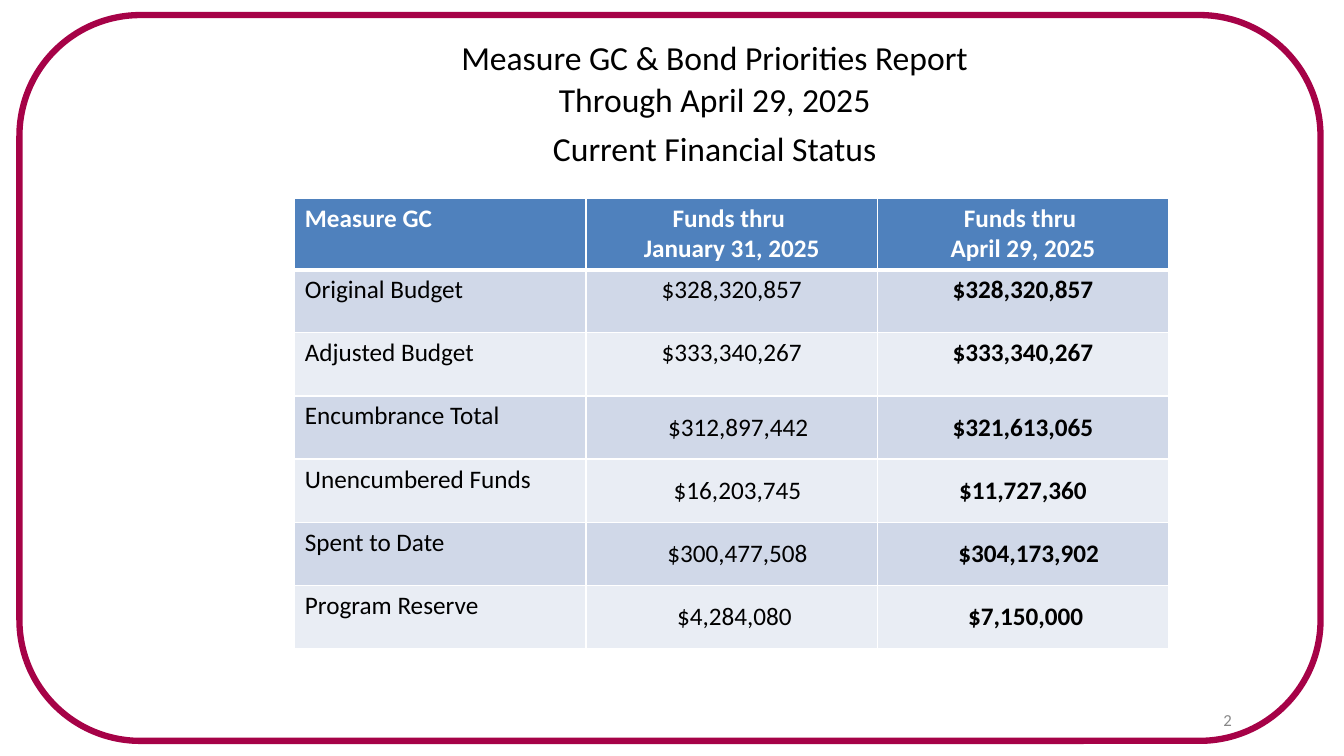
from collections import namedtuple
from dataclasses import dataclass

from lxml.etree import SubElement
from pptx import Presentation
from pptx.dml.color import RGBColor
from pptx.enum.shapes import MSO_SHAPE
from pptx.enum.text import MSO_ANCHOR, MSO_AUTO_SIZE, PP_ALIGN
from pptx.oxml.ns import qn
from pptx.util import Cm, Pt

Box = namedtuple("Box", "left top width height")
Row = namedtuple("Row", "label january april anchor shifts", defaults=(MSO_ANCHOR.MIDDLE, (0, 0)))


@dataclass(frozen=True)
class Theme:
    """Colours, font and type sizes of the slide."""
    font: str = "Calibri"
    frame: str = "A60247"
    header: str = "4F81BD"
    bands: tuple = ("D0D8E8", "E9EDF4")
    ink: str = "000000"
    light: str = "FFFFFF"
    muted: str = "888888"
    title_size: int = 24
    table_size: int = 18
    page_size: int = 12


THEME = Theme()
TITLE = ["Measure GC & Bond Priorities Report Through April 29, 2025", "Current Financial Status"]
HEADER = ["Measure GC", "Funds thru \nJanuary 31, 2025", "Funds thru \nApril 29, 2025"]
ROWS = [
    Row("Original Budget", "$328,320,857", "$328,320,857", MSO_ANCHOR.TOP),
    Row("Adjusted Budget", "$333,340,267", "$333,340,267", MSO_ANCHOR.TOP),
    Row("Encumbrance Total", "$312,897,442", "$321,613,065", shifts=(0.33, 0)),
    Row("Unencumbered Funds", "$16,203,745", "$11,727,360", shifts=(0.29, 0)),
    Row("Spent to Date", "$300,477,508", "$304,173,902", shifts=(0.29, 0.29)),
    Row("Program Reserve", "$4,284,080", "$7,150,000", shifts=(0.14, 0.14)),
]
HEADER_HEIGHT = 1.75


def apply(obj, formats):
    """Set each attribute of obj named in formats."""
    for name, value in formats.items():
        setattr(obj, name, value)


def write(tf, lines, size, color, bold=False, **formats):
    """Fill a text frame with equally formatted paragraphs."""
    tf.text = "\n".join(lines)
    for p in tf.paragraphs:
        apply(p, formats)
        for r in p.runs:
            apply(r.font, {"name": THEME.font, "size": Pt(size), "bold": bold})
            r.font.color.rgb = RGBColor.from_string(color)


def add_frame(s, box):
    """Draw the rounded outline around the slide."""
    sp = s.shapes.add_shape(MSO_SHAPE.ROUNDED_RECTANGLE, *map(Cm, box))
    sp.adjustments[0] = 1 / 6
    sp.shadow.inherit = False
    sp.fill.background()
    sp.line.color.rgb = RGBColor.from_string(THEME.frame)
    sp.line.width = Pt(4.5)


def add_title(s, box):
    """Place the report heading in the title placeholder."""
    sp = s.shapes.title
    apply(sp, {name: Cm(value) for name, value in box._asdict().items()})
    tf = sp.text_frame
    apply(tf, {"margin_left": 0, "margin_right": 0, "margin_top": Cm(0.03), "margin_bottom": 0,
               "word_wrap": True, "auto_size": MSO_AUTO_SIZE.NONE,
               "vertical_anchor": MSO_ANCHOR.TOP})
    write(tf, TITLE, THEME.title_size, THEME.ink,
          alignment=PP_ALIGN.CENTER, line_spacing=Pt(30.2))
    tf.paragraphs[-1].space_before = Pt(4.8)


def style_cell(cell, fill, bottom=1):
    """Give a cell white borders and a solid fill."""
    tc_pr = cell._tc.get_or_add_tcPr()
    for tag, width in {"a:lnL": 1, "a:lnR": 1, "a:lnT": 1, "a:lnB": bottom}.items():
        ln = SubElement(tc_pr, qn(tag), w=str(Pt(width)))
        SubElement(SubElement(ln, qn("a:solidFill")), qn("a:srgbClr"), val=THEME.light)
    cell.fill.solid()
    cell.fill.fore_color.rgb = RGBColor.from_string(fill)


def add_funds_table(s, box):
    """Build the table of funds with a header and banded rows."""
    table = s.shapes.add_table(len(ROWS) + 1, len(HEADER), *map(Cm, box)).table
    for col in table.columns:
        col.width = Cm(box.width / len(HEADER))
    for row in table.rows:
        row.height = Cm((box.height - HEADER_HEIGHT) / len(ROWS))
    table.rows[0].height = Cm(HEADER_HEIGHT)
    aligns = [PP_ALIGN.LEFT, PP_ALIGN.CENTER, PP_ALIGN.CENTER]
    for j, text in enumerate(HEADER):
        cell = table.cell(0, j)
        write(cell.text_frame, text.split("\n"), THEME.table_size, THEME.light, True,
              alignment=aligns[j])
        style_cell(cell, THEME.header, bottom=3)
    for i, row in enumerate(ROWS):
        for j, text in enumerate(row[:3]):
            cell = table.cell(i + 1, j)
            write(cell.text_frame, [text], THEME.table_size, THEME.ink, j == 2,
                  alignment=aligns[j])
            if j and row.anchor == MSO_ANCHOR.MIDDLE:
                apply(cell, {"vertical_anchor": row.anchor, "margin_left": Cm(row.shifts[j - 1]),
                             "margin_right": 0, "margin_top": 0, "margin_bottom": 0})
            style_cell(cell, THEME.bands[i % 2])


def add_page_number(s, box):
    """Write the page number in the lower right corner."""
    tf = s.shapes.add_textbox(*map(Cm, box)).text_frame
    apply(tf, {"margin_left": Cm(0.1), "margin_right": 0, "margin_top": 0, "margin_bottom": 0,
               "word_wrap": True})
    write(tf, ["2"], THEME.page_size, THEME.muted, line_spacing=Pt(12.4))


def main():
    """Build the financial status slide and save it."""
    prs = Presentation()
    apply(prs, {"slide_width": Cm(33.87), "slide_height": Cm(19.05)})
    s = prs.slides.add_slide(prs.slide_layouts[5])
    add_frame(s, Box(0.49, 0.38, 32.79, 18.29))
    add_title(s, Box(11, 0.85, 14.02, 3.38))
    add_funds_table(s, Box(7.43, 4.99, 22.02, 11.3))
    add_page_number(s, Box(30.73, 17.96, 0.69, 0.48))
    prs.save("out.pptx")


if __name__ == "__main__":
    main()
